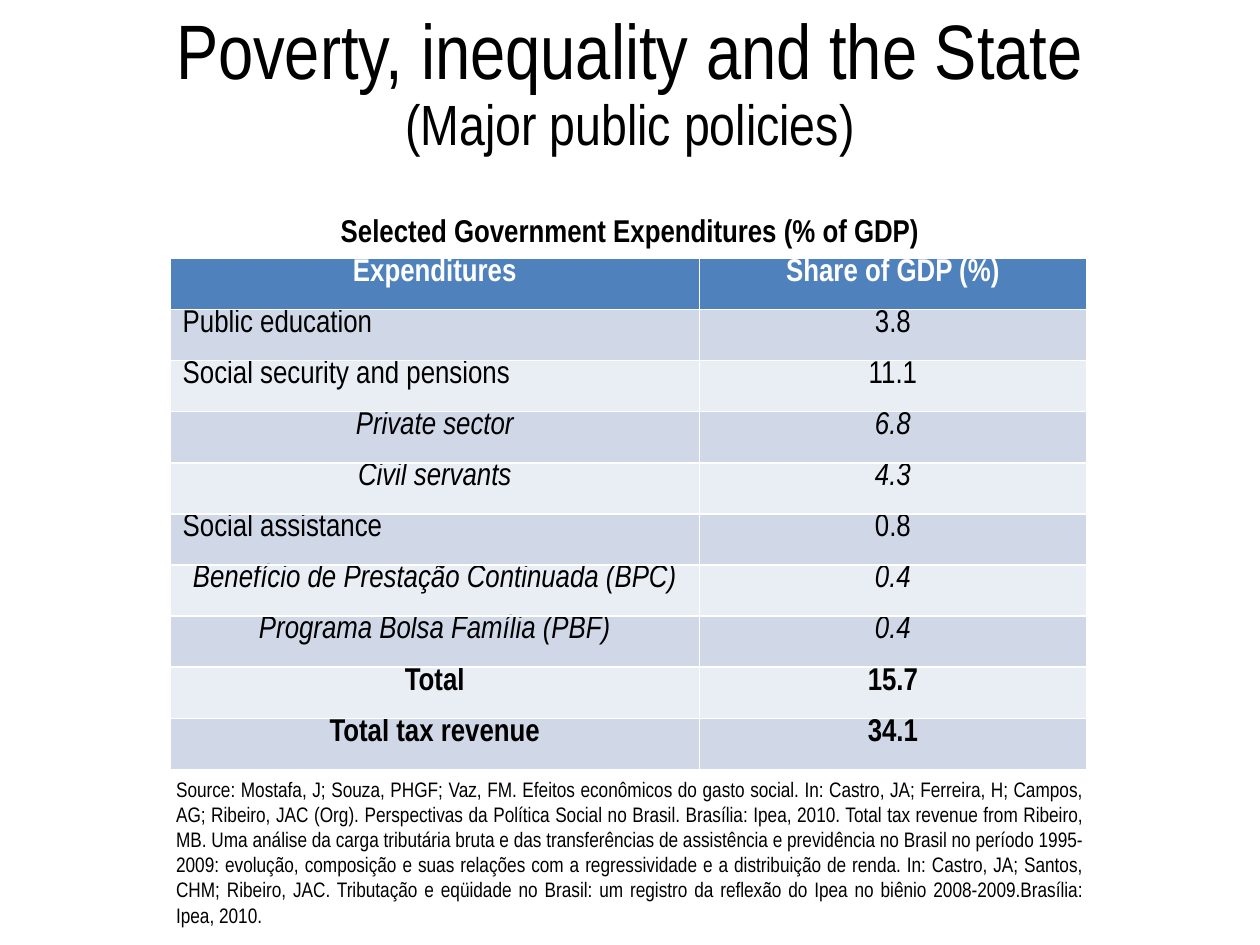
from pptx import Presentation
from pptx.dml.color import RGBColor
from pptx.enum import text as t
from pptx.util import Cm, Pt

FONT = "Arial Narrow"
BLACK = RGBColor(0x00, 0x00, 0x00)
WHITE = RGBColor(0xFF, 0xFF, 0xFF)
BLUE = RGBColor(0x4F, 0x81, 0xBD)
BANDS = RGBColor(0xD0, 0xD8, 0xE8), RGBColor(0xE9, 0xED, 0xF4)
LEFT, MID, FULL = t.PP_ALIGN.LEFT, t.PP_ALIGN.CENTER, t.PP_ALIGN.JUSTIFY

# Kinds of row: "main", "part" (italic) and "sum" (bold)
ROWS = [
    ("Public education", "3.8", "main"),
    ("Social security and pensions", "11.1", "main"),
    ("Private sector", "6.8", "part"),
    ("Civil servants", "4.3", "part"),
    ("Social assistance", "0.8", "main"),
    ("Benefício de Prestação Continuada (BPC)", "0.4", "part"),
    ("Programa Bolsa Família (PBF)", "0.4", "part"),
    ("Total", "15.7", "sum"),
    ("Total tax revenue", "34.1", "sum"),
]
SOURCE = (
    "Source: Mostafa, J; Souza, PHGF; Vaz, FM. Efeitos econômicos do gasto social. "
    "In: Castro, JA; Ferreira, H; Campos, AG; Ribeiro, JAC (Org). Perspectivas da "
    "Política Social no Brasil. Brasília: Ipea, 2010. Total tax revenue from Ribeiro, "
    "MB. Uma análise da carga tributária bruta e das transferências de assistência e "
    "previdência no Brasil no período 1995-2009: evolução, composição e suas relações "
    "com a regressividade e a distribuição de renda. In: Castro, JA; Santos, CHM; "
    "Ribeiro, JAC. Tributação e eqüidade no Brasil: um registro da reflexão do Ipea "
    "no biênio 2008-2009.Brasília: Ipea, 2010."
)


def write(para, words, size=18, color=BLACK, bold=False, italic=False, align=MID):
    para.alignment = align
    run = para.add_run()
    run.text = words
    font = run.font
    font.name, font.size = FONT, Pt(size)
    font.bold, font.italic = bold, italic
    font.color.rgb = color


def head(slide, x, y, w, h):
    title = slide.shapes.title
    title.left, title.top, title.width, title.height = Cm(x), Cm(y), Cm(w), Cm(h)
    frame = title.text_frame
    frame.vertical_anchor = t.MSO_ANCHOR.MIDDLE
    frame.auto_size = t.MSO_AUTO_SIZE.NONE
    para = frame.paragraphs[0]
    para.line_spacing = 0.9
    write(para, "Poverty, inequality and the State", size=44.1)
    para.add_line_break()
    write(para, "(Major public policies)", size=32.4)


def note(slide, x, y, w, h, words, **form):
    frame = slide.shapes.add_textbox(Cm(x), Cm(y), Cm(w), Cm(h)).text_frame
    frame.word_wrap = True
    write(frame.paragraphs[0], words, **form)


def fill(cell, words, back, **form):
    cell.fill.solid()
    cell.fill.fore_color.rgb = back
    cell.margin_top = cell.margin_bottom = 0
    write(cell.text_frame.paragraphs[0], words, **form)


def grid(slide, x, y, w, h):
    count = len(ROWS) + 1
    table = slide.shapes.add_table(count, 2, Cm(x), Cm(y), Cm(w), Cm(h)).table
    first = 10.67
    table.columns[0].width = Cm(first)
    table.columns[1].width = Cm(w - first)
    for row in table.rows:
        row.height = Cm(h / count)
    for col, words in enumerate(("Expenditures", "Share of GDP (%)")):
        fill(table.cell(0, col), words, BLUE, color=WHITE, bold=True)
    for i, (name, share, kind) in enumerate(ROWS):
        back = BANDS[i % 2]
        form = dict(bold=kind == "sum", italic=kind == "part")
        side = LEFT if kind == "main" else MID
        fill(table.cell(i + 1, 0), name, back, align=side, **form)
        fill(table.cell(i + 1, 1), share, back, **form)


def main():
    deck = Presentation()
    deck.slide_width, deck.slide_height = Cm(25.4), Cm(19.05)
    slide = deck.slides.add_slide(deck.slide_layouts[5])
    head(slide, 1.27, 0.13, 22.86, 3.17)
    grid(slide, 3.43, 5.21, 18.47, 10.3)
    note(slide, 3.3, 15.52, 18.8, 3.33, SOURCE, size=12, align=FULL)
    note(slide, 3.5, 4.12, 18.4, 1.02,
         "Selected Government Expenditures (% of GDP)", bold=True)
    deck.save("out.pptx")


if __name__ == "__main__":
    main()
